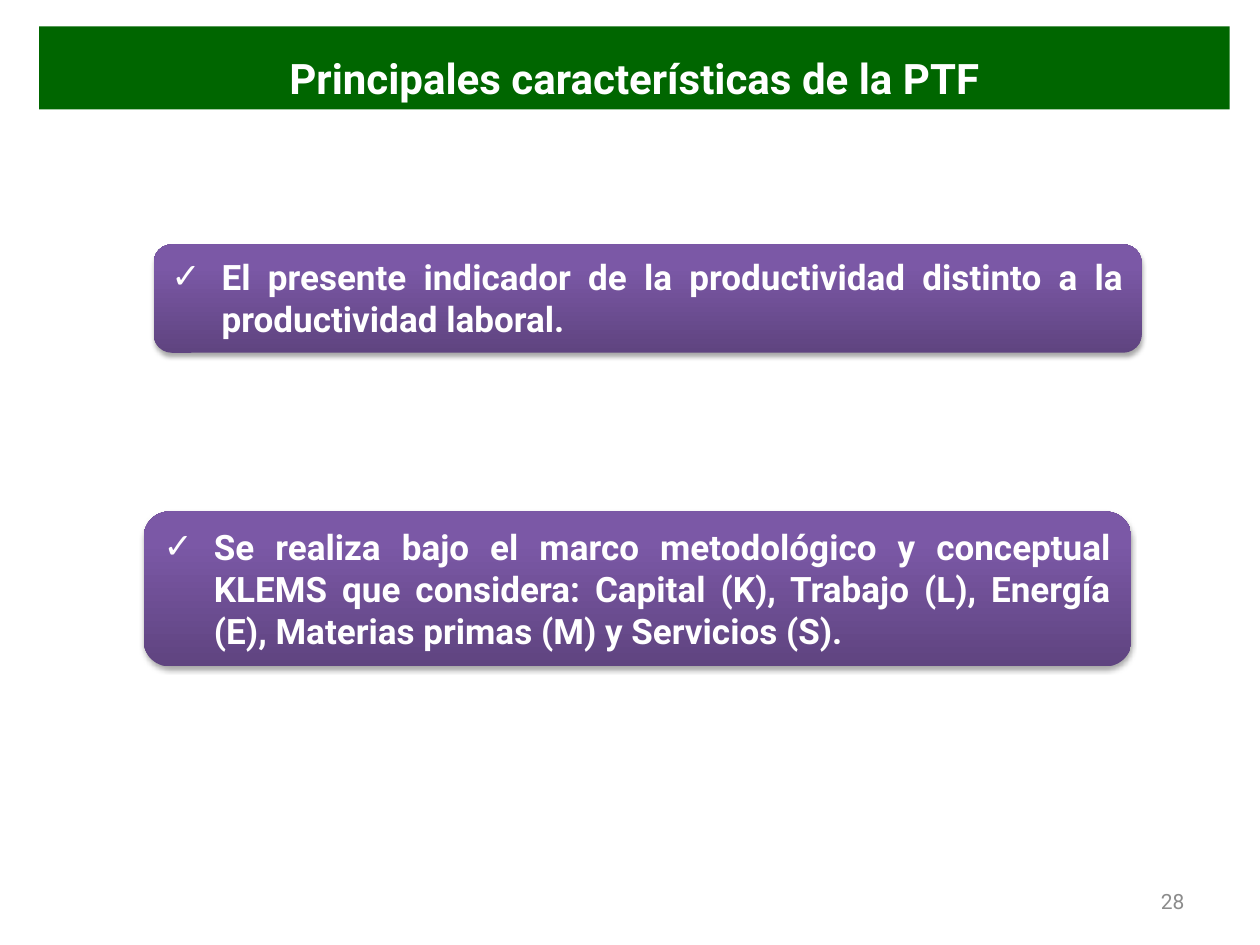
from copy import deepcopy
from dataclasses import dataclass

from lxml import etree
from pptx import Presentation
from pptx.dml.color import RGBColor
from pptx.enum import shapes, text
from pptx.oxml import ns
from pptx.util import Inches, Pt


@dataclass(frozen=True)
class Theme:
    font: str = "Roboto"
    green: str = "006600"
    white: str = "FFFFFF"
    gray: str = "8C8C8C"
    purples: tuple = ((0, "5F4480"), (0.8, "7B58A6"), (1, "7C57A8"))
    shadow: str = "000000"
    title_size: int = 24
    body_size: int = 20
    number_size: int = 12


THEME = Theme()


def write(shape, words, size, color, align, anchor, bold=True):
    frame = shape.text_frame
    frame.word_wrap = True
    frame.vertical_anchor = anchor
    frame.text = words
    para = frame.paragraphs[0]
    para.alignment = align
    font = para.runs[0].font
    font.name, font.size, font.bold = THEME.font, Pt(size), bold
    font.color.rgb = RGBColor.from_string(color)
    return para


def add_panel(page, kind, box):
    """Add a preset shape without line or shadow."""
    shape = page.shapes.add_shape(kind, *map(Inches, box))
    shape.shadow.inherit = False
    shape.line.fill.background()
    return shape


def add_title(page, box, words):
    band = add_panel(page, shapes.MSO_SHAPE.RECTANGLE, box)
    band.fill.solid()
    band.fill.fore_color.rgb = RGBColor.from_string(THEME.green)
    para = write(band, words, THEME.title_size, THEME.white,
                 text.PP_ALIGN.CENTER, text.MSO_ANCHOR.MIDDLE)
    para.line_spacing = Pt(40)


def fill_purple(shape):
    """Shade the shape from dark at the bottom to light at the top."""
    fill = shape.fill
    fill.gradient()
    fill.gradient_angle = 90
    stop_list = next(shape._element.spPr.iter(ns.qn("a:gsLst")))
    stop_list.append(deepcopy(stop_list[-1]))
    for stop, (position, color) in zip(fill.gradient_stops, THEME.purples):
        stop.position = position
        stop.color.rgb = RGBColor.from_string(color)


def add_shadow(shape):
    effects = shape._element.spPr.find(ns.qn("a:effectLst"))
    shadow = etree.SubElement(
        effects, ns.qn("a:outerShdw"), blurRad=str(Pt(3.1)),
        dist=str(Pt(1.8)), dir="5400000", rotWithShape="0")
    color = etree.SubElement(shadow, ns.qn("a:srgbClr"), val=THEME.shadow)
    etree.SubElement(color, ns.qn("a:alpha"), val="35000")


def add_check(para):
    """Give the paragraph a hanging check mark."""
    props = para._p.get_or_add_pPr()
    props.set("marL", str(Inches(0.4)))
    props.set("indent", str(-Inches(0.4)))
    etree.SubElement(props, ns.qn("a:buFont"), typeface=THEME.font)
    etree.SubElement(props, ns.qn("a:buChar"), char="✓")


def add_feature(page, box, words):
    card = add_panel(page, shapes.MSO_SHAPE.ROUNDED_RECTANGLE, box)
    fill_purple(card)
    add_shadow(card)
    para = write(card, words, THEME.body_size, THEME.white,
                 text.PP_ALIGN.JUSTIFY, text.MSO_ANCHOR.TOP)
    add_check(para)


def add_page_number(page, box, number):
    label = page.shapes.add_textbox(*map(Inches, box))
    write(label, number, THEME.number_size, THEME.gray,
          text.PP_ALIGN.RIGHT, text.MSO_ANCHOR.MIDDLE, bold=False)


def main():
    deck = Presentation()
    deck.slide_width, deck.slide_height = Inches(10), Inches(7.5)
    page = deck.slides.add_slide(deck.slide_layouts[6])
    add_page_number(page, (7.17, 6.95, 2.33, 0.4), "28")
    add_title(page, (0.31, 0.21, 9.45, 0.66),
              "Principales características de la PTF")
    add_feature(page, (1.22, 1.94, 7.84, 0.86),
                "El presente indicador de la productividad distinto a la "
                "productividad laboral.")
    add_feature(page, (1.14, 4.06, 7.84, 1.23),
                "Se realiza bajo el marco metodológico y conceptual KLEMS que "
                "considera: Capital (K), Trabajo (L), Energía (E), Materias "
                "primas (M) y Servicios (S).")
    deck.save("out.pptx")


if __name__ == "__main__":
    main()
